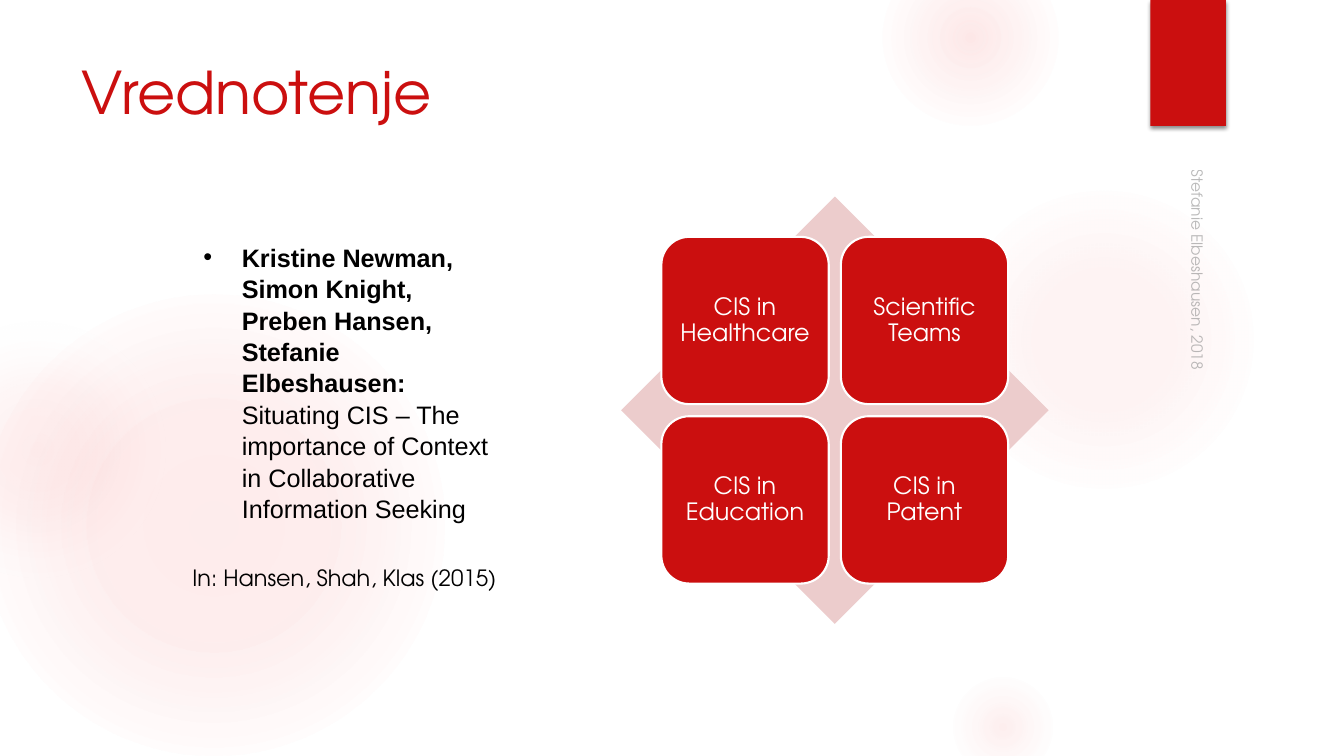
import pptx
import pptx.util
import pptx.dml.color
import pptx.enum.shapes
import pptx.enum.text
import pptx.oxml
import pptx.oxml.ns
import lxml.etree

Inches = pptx.util.Inches
Pt = pptx.util.Pt
MSO = pptx.enum.shapes.MSO_SHAPE
ANCHOR = pptx.enum.text.MSO_ANCHOR
ALIGN = pptx.enum.text.PP_ALIGN
qn = pptx.oxml.ns.qn

RED, WHITE, BLACK = "CB0F0F", "FFFFFF", "000000"
GLOW = "F35C5C"


def color(value):
    return pptx.dml.color.RGBColor.from_string(value)


def child(parent, tag, **attrs):
    el = lxml.etree.SubElement(parent, qn(tag))
    for name, value in attrs.items():
        el.set(name, str(value))
    return el


def write(tf, runs, size=16, font="TeX Gyre Adventor", fill=BLACK, align=ALIGN.LEFT,
          anchor=ANCHOR.TOP, inset=None, spacing=None, bullet=None, alpha=None):
    tf.word_wrap = True
    tf.auto_size = pptx.enum.text.MSO_AUTO_SIZE.NONE
    tf.vertical_anchor = anchor
    if inset is not None:
        tf.margin_left = tf.margin_right = tf.margin_top = tf.margin_bottom = Inches(inset)
    p = tf.paragraphs[0]
    p.alignment = align
    if spacing:
        p.line_spacing = spacing
    if bullet:
        pPr = p._p.get_or_add_pPr()
        pPr.set("marL", str(Inches(0.38)))
        pPr.set("indent", str(-Inches(0.38)))
        child(pPr, "a:buFont", typeface="Arial")
        child(pPr, "a:buChar", char=bullet)
    for text, bold in runs:
        r = p.add_run()
        r.text = text
        r.font.size = Pt(size)
        r.font.name = font
        r.font.bold = bold
        r.font.color.rgb = color(fill)
        if alpha:
            clr = r._r.rPr.find(".//" + qn("a:srgbClr"))
            child(clr, "a:alpha", val=alpha * 1000)


class Deck:
    def __init__(self):
        self.prs = pptx.Presentation()
        self.prs.slide_width = Inches(13.33)
        self.prs.slide_height = Inches(7.5)
        self.s = self.prs.slides.add_slide(self.prs.slide_layouts[5])
        self.s.background.fill.solid()
        self.s.background.fill.fore_color.rgb = color(WHITE)

    def title(self, text, x, y, w, h):
        sp = self.s.shapes.title
        sp.left, sp.top, sp.width, sp.height = map(Inches, (x, y, w, h))
        write(sp.text_frame, [(text, False)], size=42, fill=RED)

    def text(self, runs, x, y, w, h, rotation=0, **fmt):
        sp = self.s.shapes.add_textbox(*map(Inches, (x, y, w, h)))
        sp.rotation = rotation
        write(sp.text_frame, runs, **fmt)

    def shape(self, kind, x, y, w, h, fill, line=None):
        sp = self.s.shapes.add_shape(kind, *map(Inches, (x, y, w, h)))
        sp.shadow.inherit = False
        sp.fill.solid()
        sp.fill.fore_color.rgb = color(fill)
        if line:
            sp.line.color.rgb = color(line)
            sp.line.width = Pt(1.5)
        else:
            sp.line.fill.background()
        return sp

    def bubble(self, x, y, size, stops):
        sp = self.shape(MSO.OVAL, x, y, size, size, WHITE)
        spPr = sp._element.spPr
        grad = lxml.etree.Element(qn("a:gradFill"), rotWithShape="1")
        gs_list = child(grad, "a:gsLst")
        for pos, rgb, alpha in stops:
            gs = child(gs_list, "a:gs", pos=pos * 1000)
            child(child(gs, "a:srgbClr", val=rgb), "a:alpha", val=alpha * 1000)
        circle = child(grad, "a:path", path="circle")
        child(circle, "a:fillToRect", l=50000, t=50000, r=50000, b=50000)
        spPr.replace(spPr.find(qn("a:solidFill")), grad)

    def ribbon(self, x, y, w, h):
        sp = self.shape(MSO.RECTANGLE, x, y, w, h, RED)
        effects = sp._element.spPr.find(qn("a:effectLst"))
        shadow = child(effects, "a:outerShdw", blurRad=Pt(3), dist=Pt(2),
                       dir=90 * 60000, rotWithShape=0)
        child(child(shadow, "a:srgbClr", val=BLACK), "a:alpha", val=45000)

    def tile(self, text, x, y, size):
        sp = self.shape(MSO.ROUNDED_RECTANGLE, x, y, size, size, RED, line=WHITE)
        write(sp.text_frame, [(text, False)], size=17, fill=WHITE, align=ALIGN.CENTER,
              anchor=ANCHOR.MIDDLE, inset=0.07, spacing=0.9)


def main():
    deck = Deck()
    bubbles = [
        (-0.17, 2.92, 4.58, [(0, GLOW, 11), (36, GLOW, 10), (75, GLOW, 0)]),
        (-0.92, 3.17, 2.58, [(0, GLOW, 8), (36, GLOW, 5), (71, "F3F3F3", 0)]),
        (9.41, 1.83, 3.08, [(0, GLOW, 7), (36, GLOW, 6), (69, GLOW, 0)]),
        (8.75, -0.5, 1.75, [(0, GLOW, 14), (36, GLOW, 7), (73, GLOW, 0)]),
        (9.41, 6.67, 1.08, [(0, GLOW, 10), (31, GLOW, 5), (66, GLOW, 0)]),
    ]
    for bubble in bubbles:
        deck.bubble(*bubble)
    deck.ribbon(11.41, 0, 0.75, 1.25)
    deck.title("Vrednotenje", 0.71, 0.5, 10.29, 1.53)

    deck.text([("Kristine Newman, Simon Knight, Preben Hansen, Stefanie Elbeshausen: ", True),
               ("Situating CIS – The importance of Context in Collaborative "
                "Information Seeking", False)],
              1.92, 2.34, 3.07, 3.97, size=18, font="Arial", bullet="•", spacing=1.04)

    deck.shape(MSO.DIAMOND, 6.16, 1.95, 4.24, 4.24, "ECCCCC")
    contexts = ["CIS in Healthcare", "Scientific Teams", "CIS in Education", "CIS in Patent"]
    for i, context in enumerate(contexts):
        row, col = divmod(i, 2)
        deck.tile(context, 6.56 + 1.78 * col, 2.35 + 1.78 * row, 1.66)

    deck.text([("In: Hansen, Shah, Klas (2015)", False)], 1.81, 5.55, 3.31, 0.37)
    deck.text([("Stefanie Elbeshausen, 2018", False)], 9.79, 3.53, 4.22, 0.33,
              rotation=90, size=11, fill="8C8C8C", alpha=60, anchor=ANCHOR.BOTTOM)
    deck.prs.save("out.pptx")


if __name__ == "__main__":
    main()
